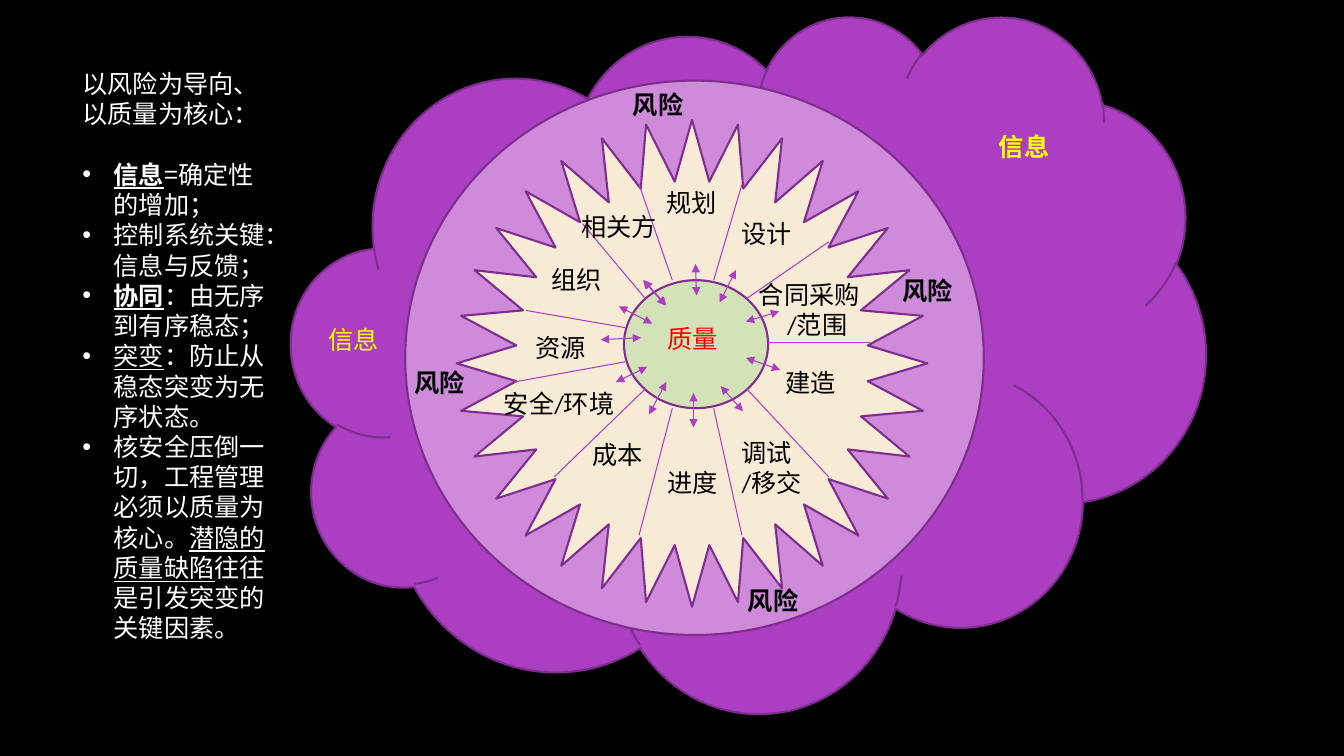
from dataclasses import dataclass

from lxml.etree import SubElement
from pptx import Presentation
from pptx.dml.color import RGBColor
from pptx.enum.shapes import MSO_CONNECTOR as Link, MSO_SHAPE as Shape
from pptx.enum.text import MSO_ANCHOR as Anchor, MSO_AUTO_SIZE as Fit, PP_ALIGN as Align
from pptx.oxml.ns import qn
from pptx.util import Inches, Pt

COLUMNS, ROWS = 133.33, 75


@dataclass(frozen=True)
class Theme:
    night: str = "000000"
    cloud: str = "AC3EC1"
    risk_ring: str = "CD8BDA"
    star: str = "F8EBD6"
    core: str = "D3E3B7"
    outline: str = "7F2E8F"
    ink: str = "000000"
    pale: str = "FFFFFF"
    signal: str = "FFFF00"
    alarm: str = "FF0000"
    latin: str = "Calibri"
    han: str = "Noto Sans CJK SC"
    size: float = 18
    leading: float = 21.6
    edge: float = 1.5
    hairline: float = 0.75


def write(paragraph, text, *, size, color, font, han, bold=None, underline=None):
    run = paragraph.add_run()
    run.text = text
    run.font.size = Pt(size)
    run.font.bold = bold
    run.font.underline = underline
    run.font.color.rgb = RGBColor.from_string(color)
    run.font.name = font
    properties = run.font._element
    properties.set("lang", "zh-CN")
    SubElement(properties, qn("a:ea")).set("typeface", han)


class Board:
    """Draws styled elements on one slide, measured in grid columns and rows."""

    def __init__(self, deck, theme):
        self.theme = theme
        self.column = deck.slide_width / COLUMNS
        self.row = deck.slide_height / ROWS
        self.slide = deck.slides.add_slide(deck.slide_layouts[6])
        backdrop = self.slide.background.fill
        backdrop.solid()
        backdrop.fore_color.rgb = RGBColor.from_string(theme.night)

    def place(self, *cells):
        units = (self.column, self.row) * 2
        return [round(cell * unit) for cell, unit in zip(cells, units)]

    def layer(self, kind, cells, color):
        layer = self.slide.shapes.add_shape(kind, *self.place(*cells))
        layer.shadow.inherit = False
        layer.fill.solid()
        layer.fill.fore_color.rgb = RGBColor.from_string(color)
        layer.line.color.rgb = RGBColor.from_string(self.theme.outline)
        layer.line.width = Pt(self.theme.edge)

    def line(self, cells, arrows=False):
        line = self.slide.shapes.add_connector(Link.STRAIGHT, *self.place(*cells))
        line.line.width = Pt(self.theme.hairline)
        line.line.color.rgb = RGBColor.from_string(self.theme.cloud)
        properties = line._element.spPr
        if arrows:
            stroke = properties.find(qn("a:ln"))
            for end in ("a:headEnd", "a:tailEnd"):
                SubElement(stroke, qn(end)).set("type", "triangle")
        SubElement(properties, qn("a:effectLst"))

    def frame(self, cells):
        frame = self.slide.shapes.add_textbox(*self.place(*cells)).text_frame
        frame.word_wrap = True
        frame.auto_size = Fit.SHAPE_TO_FIT_TEXT
        frame.vertical_anchor = Anchor.TOP
        return frame

    def paragraph(self, frame, runs, font, color, margin=0, bullet=False, before=0):
        first = not frame.paragraphs[0].runs
        paragraph = frame.paragraphs[0] if first else frame.add_paragraph()
        paragraph.alignment = Align.LEFT
        paragraph.line_spacing = Pt(self.theme.leading)
        if before:
            paragraph.space_before = Pt(before)
        properties = paragraph._p.get_or_add_pPr()
        if margin:
            properties.set("marL", str(Inches(margin)))
        if bullet:
            properties.set("indent", str(-Inches(margin)))
            SubElement(properties, qn("a:buFont")).set("typeface", "Arial")
            SubElement(properties, qn("a:buChar")).set("char", "•")
        for text, style in runs:
            write(paragraph, text, size=self.theme.size, color=color, font=font,
                  han=self.theme.han, **style)

    def label(self, lines, left, top, width=7.1, height=4, color=None, bold=None, inset=0):
        frame = self.frame((left, top, width, height))
        for number, text in enumerate(lines.split("\n")):
            self.paragraph(frame, [(text, {"bold": bold})], self.theme.latin,
                           color or self.theme.ink, margin=inset * number)

    def notes(self, cells, heading, points):
        frame = self.frame(cells)
        style = (self.theme.han, self.theme.pale)
        self.paragraph(frame, [(heading, {})], *style)
        for number, runs in enumerate(points):
            gap = 0 if number else self.theme.leading
            self.paragraph(frame, runs, *style, margin=0.31, bullet=True, before=gap)


PLAIN = {}
LINED = {"underline": True}
STRONG = {"bold": True, "underline": True}

PRINCIPLES = [
    [("信息", STRONG), ("=确定性的增加；", PLAIN)],
    [("控制系统关键：信息与反馈；", PLAIN)],
    [("协同", STRONG), ("：由无序到有序稳态；", PLAIN)],
    [("突变", LINED), ("：防止从稳态突变为无序状态。", PLAIN)],
    [("核安全压倒一切，工程管理必须以质量为核心。", PLAIN),
     ("潜隐的质量缺陷", LINED), ("往往是引发突变的关键因素。", PLAIN)],
]

SECTOR_EDGES = [
    (63.4, 18.3, 66.7, 27.8), (73.6, 18.3, 70.8, 27.8), (82.2, 24, 74.1, 29.6),
    (86.3, 34, 76.2, 34), (74.1, 38.6, 82.2, 47.3), (73.6, 53.1, 70.8, 40.5),
    (63.4, 53.1, 66.7, 40.5), (55, 47.3, 64, 38.6), (57.8, 22.2, 64, 29.6),
    (52.2, 30.8, 62, 32.5), (51, 37.9, 62, 35.9),
]

EXCHANGES = [
    (63.9, 27.8, 66.1, 30.3), (61.4, 30.4, 64.7, 32.1), (59.6, 33.7, 63.6, 33.5),
    (69, 26.2, 69.1, 29.3), (71.5, 38.3, 73.7, 40.8), (68.8, 39, 68.8, 42.4),
    (66.1, 37.9, 64.4, 41.1), (74, 35.5, 77.4, 36.7), (74, 31.9, 77.3, 30.9),
    (63.8, 27.8, 66, 30.3), (73, 26.8, 71.4, 30), (64.2, 36.4, 61.1, 37.9),
]

WORK_AREAS = [
    ("建造", 76.9, 35.9), ("设计", 72.6, 21.2), ("规划", 65.1, 18.1),
    ("成本", 57.8, 43.1), ("调试\n/移交", 72.6, 42.9, 8.7, 7.1),
    ("进度", 65.2, 45.9), ("资源", 52.1, 32.5, 7.3, 4.1), ("组织", 53.7, 25.7),
    ("相关方", 56.7, 20.5, 10.8), ("安全/环境", 49, 38, 14.1),
]

RISKS = [(88.5, 26.8), (40.1, 35.9), (73.2, 57.6), (61.8, 8.4)]


def main():
    deck = Presentation()
    deck.slide_width, deck.slide_height = Inches(13.33), Inches(7.5)
    theme = Theme()
    board = Board(deck, theme)

    board.layer(Shape.CLOUD, (28.9, 1.5, 90.7, 69.1), theme.cloud)
    board.layer(Shape.OVAL, (40.2, 8, 57.4, 55), theme.risk_ring)
    board.layer(Shape.STAR_32_POINT, (45.3, 11.9, 46.7, 48.3), theme.star)
    board.layer(Shape.OVAL, (61.9, 27.8, 14.3, 12.7), theme.core)

    for edge in SECTOR_EDGES:
        board.line(edge)
    for area in WORK_AREAS:
        board.label(*area)
    board.label("合同采购\n/范围", 74.3, 27.2, 12.1, 7.1, inset=0.28)
    for spot in RISKS:
        board.label("风险", *spot, bold=True)
    board.label("信息", 98.1, 12.5, color=theme.signal, bold=True)
    board.label("信息", 31.6, 31.7, color=theme.signal)
    board.label("质量", 65.2, 31.6, color=theme.alarm)
    for exchange in EXCHANGES:
        board.line(exchange, arrows=True)

    board.notes((7.2, 6.3, 21.4, 61.6), "以风险为导向、以质量为核心：", PRINCIPLES)
    deck.save("out.pptx")


if __name__ == "__main__":
    main()
